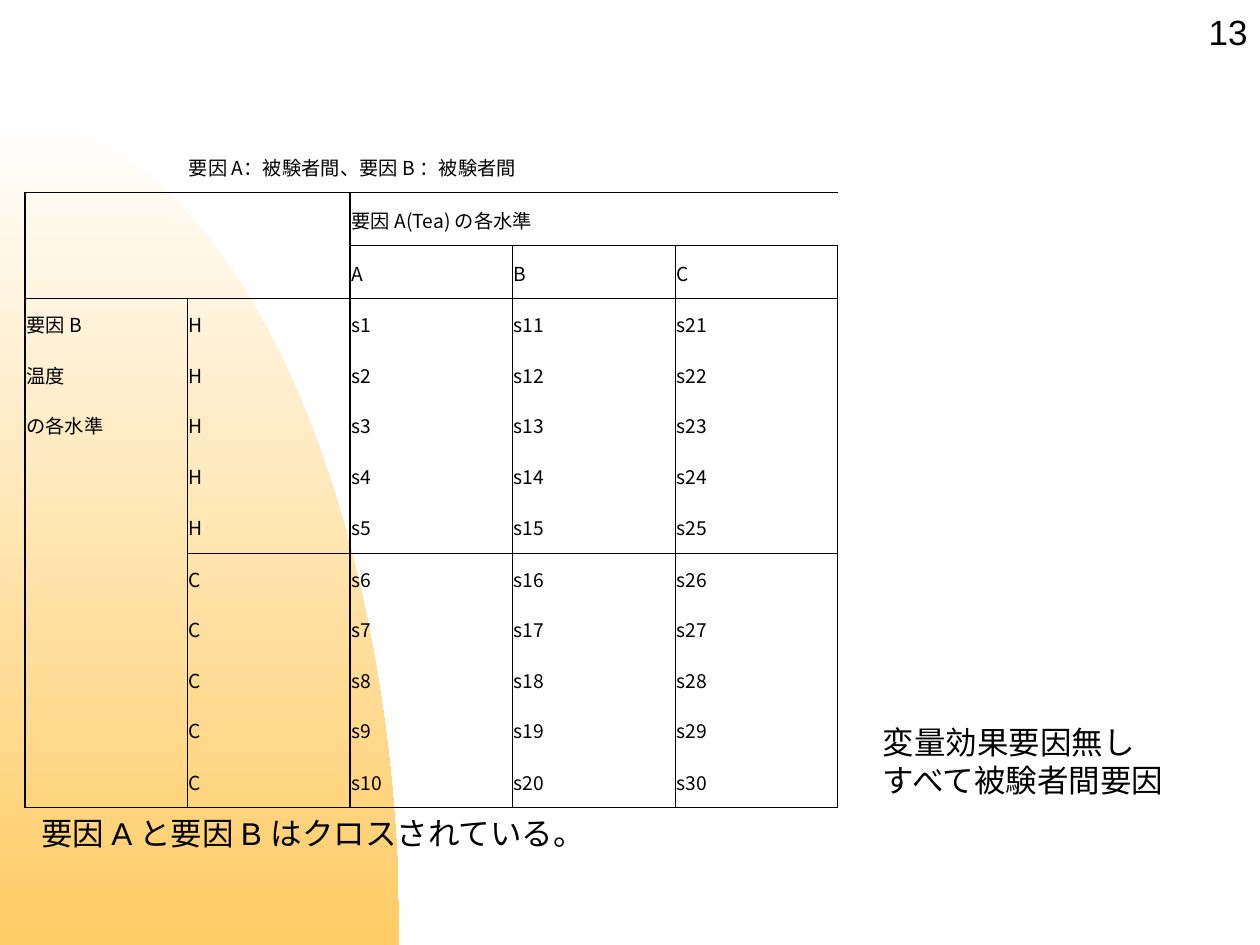
import math
from typing import NamedTuple

import pptx
import pptx.dml.color
import pptx.enum.dml
import pptx.enum.text
import pptx.oxml
import pptx.oxml.ns
import pptx.util

Inches = pptx.util.Inches
Pt = pptx.util.Pt
qn = pptx.oxml.ns.qn
ANCHOR = pptx.enum.text.MSO_ANCHOR
ALIGN = pptx.enum.text.PP_ALIGN
AUTO = pptx.enum.text.MSO_AUTO_SIZE

BLACK = pptx.dml.color.RGBColor(0x00, 0x00, 0x00)
WHITE = pptx.dml.color.RGBColor(0xFF, 0xFF, 0xFF)
ORANGE = pptx.dml.color.RGBColor(0xFF, 0xCC, 0x66)
LATIN_FONT = "Arial"
CJK_FONT = "Noto Sans CJK JP"
NO_STYLE = "{2D5ABB26-0587-4C30-8999-92F81FD0307C}"

COL_WIDTH = 1.29
ROW_HEIGHTS = [0.42] * 3 + [0.4] * 4 + [0.42] + [0.4] * 4 + [0.42]
N_ROWS, N_COLS = len(ROW_HEIGHTS), 5
FIRST_DATA_ROW = 3
PER_LEVEL = 5


class Label(NamedTuple):
    lines: list[str]
    left: float
    top: float
    width: float
    height: float
    size: int = 18
    align: ALIGN = ALIGN.LEFT
    anchor: ANCHOR = ANCHOR.TOP
    auto_size: AUTO = AUTO.SHAPE_TO_FIT_TEXT


class Rule(NamedTuple):
    """A grid line: index of the line, and the cells from start to end it passes."""
    horizontal: bool
    index: int
    start: int
    end: int
    weight: float


LABELS = [
    Label(["13"], 9.11, 0, 0.89, 0.5, 20, ALIGN.RIGHT, ANCHOR.MIDDLE, AUTO.NONE),
    Label(["要因 A と要因 B はクロスされている。"], 0.23, 6.41, 4.58, 0.4),
    Label(["変量効果要因無し", "すべて被験者間要因"], 6.91, 5.69, 2.47, 0.71),
]

RULES = [
    Rule(True, 1, 0, 5, 1),
    Rule(True, 2, 2, 5, 1),
    Rule(True, 3, 0, 5, 1),
    Rule(True, 8, 1, 5, 0.5),
    Rule(True, 13, 0, 5, 1),
    Rule(False, 0, 1, 13, 1),
    Rule(False, 1, 3, 13, 0.5),
    Rule(False, 2, 1, 13, 1),
    Rule(False, 3, 2, 13, 0.5),
    Rule(False, 4, 2, 13, 0.5),
    Rule(False, 5, 1, 13, 1),
]


def add_run(p, text: str, size: float, latin: str) -> None:
    r = p.add_run()
    r.text = text
    r.font.size = Pt(size)
    r.font.name = latin
    r.font.color.rgb = BLACK
    ea = pptx.oxml.parse_xml(f'<a:ea {pptx.oxml.ns.nsdecls("a")} typeface="{CJK_FONT}"/>')
    r.font._element.find(qn("a:latin")).addnext(ea)


def add_label(s, label: Label) -> None:
    sp = s.shapes.add_textbox(Inches(label.left), Inches(label.top),
                              Inches(label.width), Inches(label.height))
    tf = sp.text_frame
    tf.word_wrap = False
    tf.auto_size = label.auto_size
    tf.vertical_anchor = label.anchor
    p = tf.paragraphs[0]
    p.alignment = label.align
    for i, line in enumerate(label.lines):
        if i:
            p.add_line_break()
        add_run(p, line, label.size, LATIN_FONT)


def add_quarter_ellipse(s, top: float, width: float, bottom: float, steps: int = 90) -> None:
    angles = [math.pi / 2 * i / steps for i in range(steps + 1)]
    points = [(Inches(width * math.sin(a)), Inches(bottom - (bottom - top) * math.cos(a)))
              for a in angles]
    fb = s.shapes.build_freeform(*points[0])
    fb.add_line_segments(points[1:] + [(0, Inches(bottom))], close=True)
    sp = fb.convert_to_shape()
    sp.shadow.inherit = False
    sp.line.fill.background()
    sp.fill.gradient()
    sp.fill.gradient_angle = 270
    for stop, color, position in zip(sp.fill.gradient_stops, (WHITE, ORANGE), (0, 1)):
        stop.color.rgb = color
        stop.position = position


def cell_texts() -> dict[tuple[int, int], str]:
    texts = {(0, 1): "要因 A：被験者間、要因 B ：被験者間", (1, 2): "要因 A(Tea) の各水準"}
    for i, text in enumerate(["要因 B", "温度", "の各水準"]):
        texts[FIRST_DATA_ROW + i, 0] = text
    for k, level in enumerate("ABC"):
        texts[2, 2 + k] = level
    for i in range(2 * PER_LEVEL):
        row = FIRST_DATA_ROW + i
        texts[row, 1] = "HC"[i // PER_LEVEL]
        for k in range(3):
            texts[row, 2 + k] = f"s{10 * k + i + 1}"
    return texts


def border_weights() -> dict[tuple[int, int, str], float]:
    """Give each rule to the cells on both of its sides."""
    weights = {}
    for rule in RULES:
        for n in range(rule.start, rule.end):
            if rule.horizontal:
                weights[rule.index - 1, n, "B"] = rule.weight
                weights[rule.index, n, "T"] = rule.weight
            else:
                weights[n, rule.index - 1, "R"] = rule.weight
                weights[n, rule.index, "L"] = rule.weight
    return weights


def set_border(cell, side: str, weight: float) -> None:
    fill = f'<a:solidFill><a:srgbClr val="{BLACK}"/></a:solidFill>' if weight else "<a:noFill/>"
    cell._tc.get_or_add_tcPr().append(pptx.oxml.parse_xml(
        f'<a:ln{side} {pptx.oxml.ns.nsdecls("a")} w="{int(Pt(weight))}">{fill}</a:ln{side}>'))


def add_design_table(s, left: float, top: float) -> None:
    frame = s.shapes.add_table(N_ROWS, N_COLS, Inches(left), Inches(top),
                               Inches(COL_WIDTH * N_COLS), Inches(sum(ROW_HEIGHTS)))
    table = frame.table
    table.first_row = table.horz_banding = False
    table._tbl.tblPr.find(qn("a:tableStyleId")).text = NO_STYLE
    for column in table.columns:
        column.width = Inches(COL_WIDTH)
    for row, height in zip(table.rows, ROW_HEIGHTS):
        row.height = Inches(height)

    # Spanning headings
    table.cell(0, 1).merge(table.cell(0, 4))
    table.cell(1, 2).merge(table.cell(1, 4))

    texts, weights = cell_texts(), border_weights()
    for r in range(N_ROWS):
        for c in range(N_COLS):
            cell = table.cell(r, c)
            cell.margin_left = cell.margin_right = cell.margin_top = Inches(0.01)
            cell.margin_bottom = 0
            cell.vertical_anchor = ANCHOR.MIDDLE
            for side in "LRTB":
                set_border(cell, side, weights.get((r, c, side), 0))
            cell.fill.background()
            if (r, c) in texts:
                add_run(cell.text_frame.paragraphs[0], texts[r, c], 11, CJK_FONT)


def main() -> None:
    prs = pptx.Presentation()
    prs.slide_width, prs.slide_height = Inches(10), Inches(7.5)
    s = prs.slides.add_slide(prs.slide_layouts[6])

    # Background decoration
    add_quarter_ellipse(s, top=0.92, width=3.17, bottom=7.5)

    # Experimental design
    add_design_table(s, left=0.2, top=1.11)

    # Slide number and remarks
    for label in LABELS:
        add_label(s, label)

    prs.save("out.pptx")


if __name__ == "__main__":
    main()
